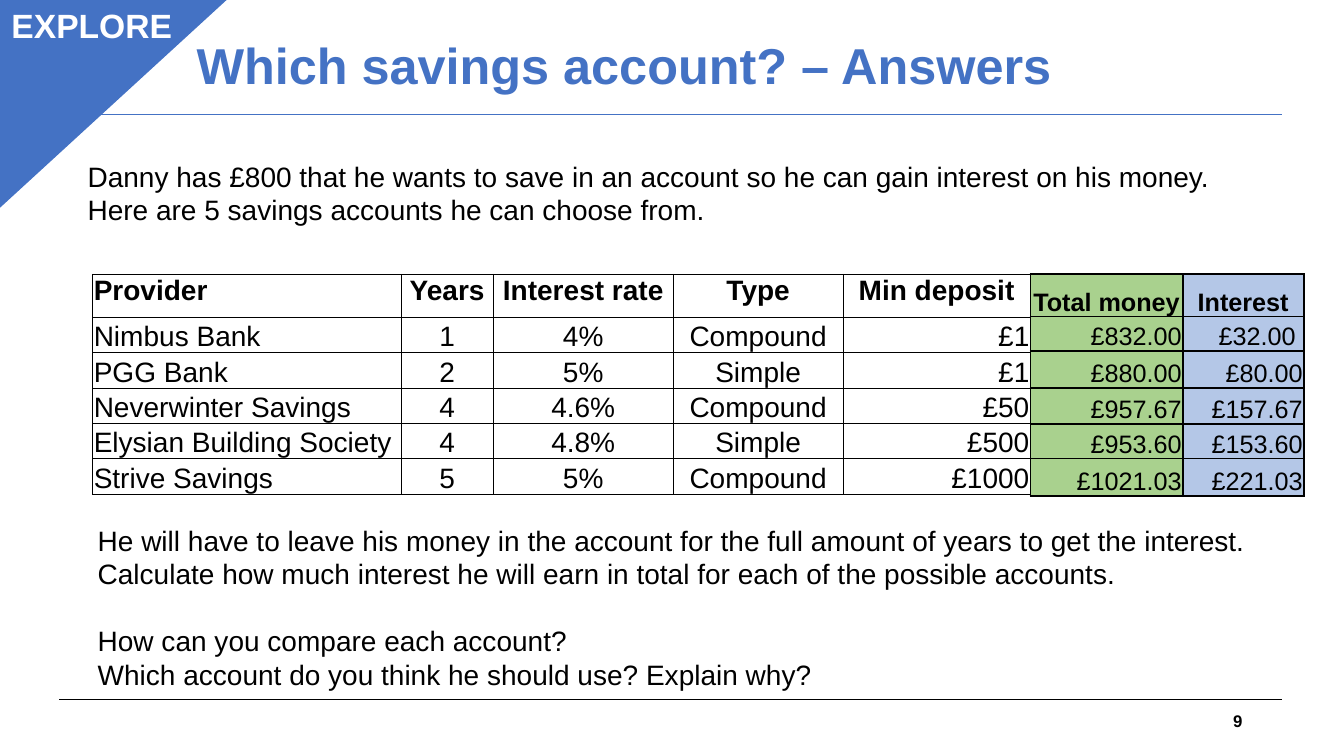
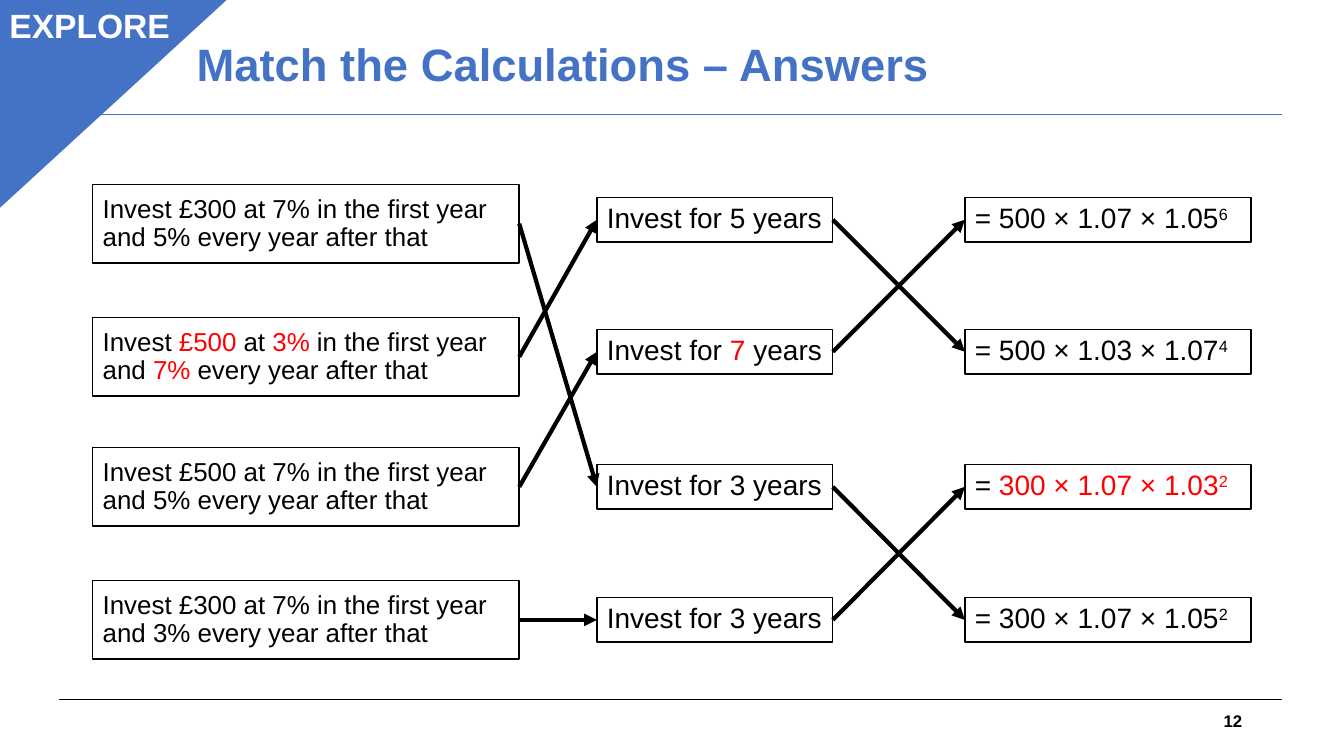
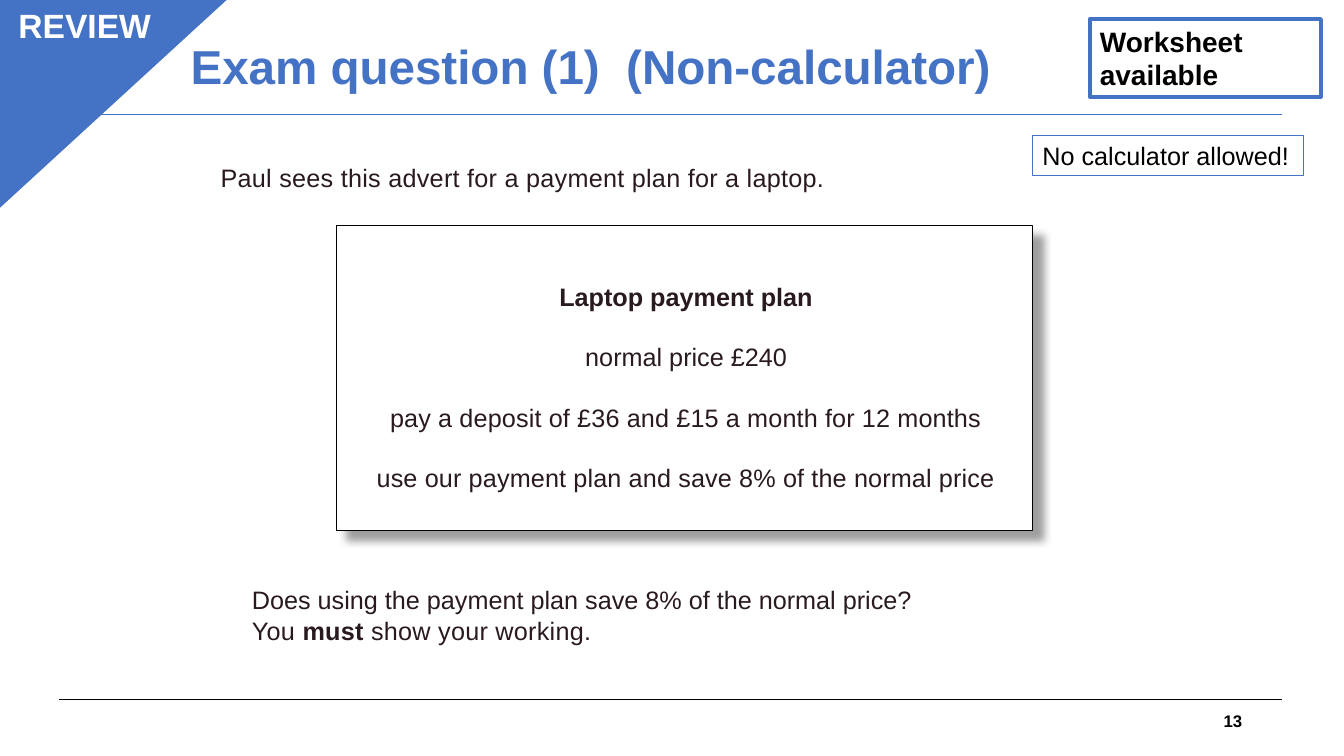
import dataclasses

import lxml.etree
import pptx
import pptx.dml.color
import pptx.enum.shapes
import pptx.enum.text
import pptx.oxml
import pptx.oxml.ns
import pptx.util

Inches = pptx.util.Inches
Pt = pptx.util.Pt
SHAPE = pptx.enum.shapes.MSO_SHAPE
ANCHOR = pptx.enum.text.MSO_ANCHOR
LEFT = pptx.enum.text.PP_ALIGN.LEFT
CENTER = pptx.enum.text.PP_ALIGN.CENTER
RIGHT = pptx.enum.text.PP_ALIGN.RIGHT
qn = pptx.oxml.ns.qn


@dataclasses.dataclass(frozen=True)
class Theme:
    """Colours, font and type sizes shared by the slides."""
    font: str = "Arial"
    blue: str = "4472C4"
    black: str = "000000"
    white: str = "FFFFFF"
    red: str = "FF0000"
    ink: str = "291A20"
    green_fill: str = "A9D18E"
    blue_fill: str = "B4C7E7"
    shadow: str = "0D0D0D"
    tag: float = 24
    body: float = 20
    match: float = 18.5
    small: float = 18
    number: float = 12


T = Theme()


def rgb(color):
    """Turn a hex string into a colour."""
    return pptx.dml.color.RGBColor.from_string(color)


def write(tf, paras, size, color=T.black, bold=False, align=LEFT, spacing=None,
          anchor=ANCHOR.TOP):
    """Fill a text frame; a run is a string or a (string, changes) pair."""
    tf.word_wrap = True
    tf.vertical_anchor = anchor
    for i, runs in enumerate(paras):
        p = tf.paragraphs[0] if i == 0 else tf.add_paragraph()
        p.alignment = align
        if spacing:
            p.line_spacing = spacing
        for run in [runs] if isinstance(runs, str) else runs:
            text, changes = (run, {}) if isinstance(run, str) else run
            r = p.add_run()
            r.text = text
            r.font.name = T.font
            r.font.size = Pt(size)
            r.font.bold = changes.get("bold", bold)
            r.font.color.rgb = rgb(changes.get("color", color))
            for name in ("spc", "baseline"):
                if name in changes:
                    r._r.get_or_add_rPr().set(name, str(changes[name]))


def add_text(s, box, paras, size, **style):
    """Add a text box in box (left, top, width, height)."""
    sp = s.shapes.add_textbox(*map(Inches, box))
    write(sp.text_frame, paras, size, **style)
    return sp


def add_box(s, box, line, weight, kind=SHAPE.RECTANGLE, fill=None):
    """Add an outlined preset shape without a shadow."""
    sp = s.shapes.add_shape(kind, *map(Inches, box))
    sp.shadow.inherit = False
    if fill:
        sp.fill.solid()
        sp.fill.fore_color.rgb = rgb(fill)
    else:
        sp.fill.background()
    sp.line.color.rgb = rgb(line)
    sp.line.width = Pt(weight)
    return sp


def add_line(s, start, end, color, weight):
    """Add a straight line between two points."""
    c = s.shapes.add_connector(pptx.enum.shapes.MSO_CONNECTOR.STRAIGHT,
                               *map(Inches, (*start, *end)))
    c.line.color.rgb = rgb(color)
    c.line.width = Pt(weight)
    lxml.etree.SubElement(c._element.spPr, qn("a:effectLst"))
    return c


def add_arrow(s, source, target):
    """Join the right side of source to the left side of target."""
    c = add_line(s, (0, 0), (1, 1), T.black, 3)
    c.begin_connect(source, 3)
    c.end_connect(target, 1)
    tail = lxml.etree.SubElement(c.line._get_or_add_ln(), qn("a:tailEnd"))
    tail.set("type", "triangle")


def add_shadow(sp):
    """Give a shape a soft shadow to the lower right."""
    effects = sp._element.spPr.find(qn("a:effectLst"))
    effects.append(pptx.oxml.parse_xml(
        f'<a:outerShdw {pptx.oxml.ns.nsdecls("a")} blurRad="{Pt(6)}" dist="{Pt(10)}" '
        f'dir="2700000" algn="tl" rotWithShape="0"><a:srgbClr val="{T.shadow}">'
        '<a:alpha val="40000"/></a:srgbClr></a:outerShdw>'))


def set_borders(cell, weight):
    """Draw the four borders of a cell in black."""
    tc_pr = cell._tc.get_or_add_tcPr()
    for i, side in enumerate("LRTB"):
        tc_pr.insert(i, pptx.oxml.parse_xml(
            f'<a:ln{side} {pptx.oxml.ns.nsdecls("a")} w="{Pt(weight)}"><a:solidFill>'
            f'<a:srgbClr val="{T.black}"/></a:solidFill></a:ln{side}>'))


def add_grid(s, left, top, widths, heights, rows, aligns, size, weight, fill=None):
    """Add a bordered table with a bold header row."""
    frame = s.shapes.add_table(len(rows), len(widths), *map(
        Inches, (left, top, sum(widths), sum(heights))))
    table = frame.table
    table.first_row = table.horz_banding = False
    for column, width in zip(table.columns, widths):
        column.width = Inches(width)
    for i, (row, height) in enumerate(zip(rows, heights)):
        table.rows[i].height = Inches(height)
        for j, text in enumerate(row):
            cell = table.cell(i, j)
            cell.margin_left = cell.margin_right = cell.margin_top = Inches(0.01)
            cell.margin_bottom = 0
            header = i == 0
            align = CENTER if header and j + fill_offset(fill) else aligns[j]
            write(cell.text_frame, [text], size, bold=header, align=align)
            cell.vertical_anchor = ANCHOR.BOTTOM if fill or not header else ANCHOR.TOP
            if fill:
                cell.fill.solid()
                cell.fill.fore_color.rgb = rgb(fill)
                if header:
                    cell.text_frame.paragraphs[0].space_after = Pt(6)
            else:
                cell.fill.background()
            set_borders(cell, weight)


def fill_offset(fill):
    """Count a filled answer column as never being the first column."""
    return 1 if fill else 0


def add_slide(prs, title, title_box, title_size, tag, tag_width, number):
    """Add a slide with its title, rules, corner tag and number."""
    s = prs.slides.add_slide(prs.slide_layouts[5])
    sp = s.shapes.title
    sp.left, sp.top, sp.width, sp.height = map(Inches, title_box)
    write(sp.text_frame, [title], title_size, color=T.blue, bold=True, spacing=0.9)
    sp.text_frame.auto_size = pptx.enum.text.MSO_AUTO_SIZE.NONE
    for y, color in ((6.94, T.black), (1.14, T.blue)):
        add_line(s, (0.59, y), (12.72, y), color, 0.75)
    corner = add_box(s, (0.07, -0.12, 2.1, 2.29), T.blue, 1, SHAPE.RIGHT_TRIANGLE, T.blue)
    corner.rotation = 90
    add_text(s, (-0.03, 0, tag_width, 0.5), [tag], T.tag, color=T.white, bold=True,
             align=CENTER)
    add_text(s, (9.42, 6.95, 3, 0.4), [number], T.number, bold=True, align=RIGHT,
             anchor=ANCHOR.MIDDLE)
    return s


def add_accounts(s, left, top):
    """Add the savings accounts table and its two answer columns."""
    rows = [
        ("Provider", "Years", "Interest rate", "Type", "Min deposit"),
        ("Nimbus Bank", "1", "4%", "Compound", "£1"),
        ("PGG Bank", "2", "5%", "Simple", "£1"),
        ("Neverwinter Savings", "4", "4.6%", "Compound", "£50"),
        ("Elysian Building Society", "4", "4.8%", "Simple", "£500"),
        ("Strive Savings", "5", "5%", "Compound", "£1000"),
    ]
    widths = (3.06, 0.91, 1.79, 1.68, 1.86)
    add_grid(s, left, top, widths, [0.43] + [0.35] * 5, rows,
             (LEFT, CENTER, CENTER, CENTER, RIGHT), T.body, 0.5)
    answers = [
        (1.51, T.green_fill, ("Total money", "£832.00", "£880.00", "£957.67",
                              "£953.60", "£1021.03")),
        (1.2, T.blue_fill, ("Interest", "£32.00 ", "£80.00", "£157.67",
                            "£153.60", "£221.03")),
    ]
    x = left + sum(widths)
    for width, fill, values in answers:
        add_grid(s, x, top, [width], (0.42, 0.34, 0.37, 0.36, 0.34, 0.37),
                 [[value] for value in values], [RIGHT], T.small, 1.5, fill)
        x += width


def savings_slide(prs):
    """Build the savings account answers."""
    s = add_slide(prs, "Which savings account? – Answers", (1.85, 0.36, 8.9, 0.89), 36,
                  "EXPLORE", 1.88, "9")
    add_accounts(s, 0.92, 2.72)
    add_text(s, (0.77, 1.53, 12.08, 1.08), [
        "Danny has £800 that he wants to save in an account so he can gain interest "
        "on his money.",
        "Here are 5 savings accounts he can choose from."], T.body)
    task = add_text(s, (0.87, 5.14, 11.61, 1.75), [
        "He will have to leave his money in the account for the full amount of years "
        "to get the interest.",
        "Calculate how much interest he will earn in total for each of the possible "
        "accounts.",
        "How can you compare each account?",
        "Which account do you think he should use? Explain why?"], T.body)
    task.text_frame.paragraphs[2].space_before = Pt(24)


def add_column(s, left, tops, width, height, texts, size):
    """Add one column of outlined boxes and return them."""
    boxes = []
    for top, runs in zip(tops, texts):
        sp = add_box(s, (left, top, width, height), T.black, 1)
        write(sp.text_frame, [runs], size, spacing=0.9, anchor=ANCHOR.MIDDLE)
        boxes.append(sp)
    return boxes


def matching_slide(prs):
    """Build the matching of investments, terms and calculations."""
    s = add_slide(prs, "Match the Calculations – Answers", (1.85, 0.37, 7.73, 0.99), 32.4,
                  "EXPLORE", 1.84, "12")
    red = {"color": T.red}
    plan = "Invest £{} at 7% in the first year and {}% every year after that"
    plans = [
        plan.format(300, 5),
        ["Invest ", ("£500 ", red), "at ", ("3%", red), " in the first year and ",
         ("7%", red), " every year after that"],
        plan.format(500, 5),
        plan.format(300, 3),
    ]
    terms = ["Invest for 5 years", ["Invest for ", ("7", red), " years"],
             "Invest for 3 years", "Invest for 3 years"]
    power = {"baseline": 30000}
    sums = [
        ["= 500 × 1.07 × 1.05", ("6", power)],
        ["= 500 × 1.03 × 1.07", ("4", power)],
        ["=", (" 300 × 1.07 × 1.03", red), ("2", {**red, **power})],
        ["= 300 × 1.07 × 1.05", ("2", power)],
    ]
    tops = (1.96, 3.27, 4.61, 5.93)
    plans = add_column(s, 0.92, (1.83, 3.15, 4.44, 5.76), 4.23, 0.78, plans, T.match)
    terms = add_column(s, 5.92, tops, 2.34, 0.44, terms, T.body)
    sums = add_column(s, 9.57, tops, 2.84, 0.44, sums, T.body)
    for sources, targets, order in ((plans, terms, (2, 0, 1, 3)),
                                    (terms, sums, (1, 0, 3, 2))):
        for source, i in zip(sources, order):
            add_arrow(s, source, targets[i])


def add_advert(s, left, top):
    """Add the shadowed laptop advert."""
    add_shadow(add_box(s, (left, top, 6.9, 3.02), T.black, 0.5, fill=T.white))
    tight = {"spc": 10}
    add_text(s, (left + 0.26, top + 0.2, 6.41, 2.52), [
        [("Laptop payment plan", {"bold": True})],
        "normal price £240",
        [("pay a deposit of £36 and £15 a month for 12 months", tight)],
        [("use our payment plan and save 8% of the normal price", tight)]],
        T.small, color=T.ink, align=CENTER, spacing=2.0)


def exam_slide(prs):
    """Build the exam question."""
    s = add_slide(prs, "Exam question (1)  (Non-calculator)", (1.79, 0.38, 9.02, 0.96), 34,
                  "REVIEW", 1.74, "13")
    loose = {"spc": 20}
    note = add_box(s, (10.81, 0.19, 2.29, 0.77), T.blue, 3)
    write(note.text_frame, ["Worksheet", "available"], T.body, bold=True)
    add_text(s, (2.09, 1.56, 6.5, 0.4), [
        [("Paul sees this advert for a payment plan for a laptop.", loose)]],
        T.small, color=T.ink)
    add_advert(s, 3.34, 2.24)
    add_text(s, (2.4, 5.75, 9.16, 0.71), [
        "Does using the payment plan save 8% of the normal price?",
        [("You ", loose), ("must", {"bold": True, **loose}),
         (" show your working.", loose)]], T.small, color=T.ink)
    rule = add_box(s, (10.24, 1.34, 2.69, 0.4), T.blue, 0.75)
    write(rule.text_frame, ["No calculator allowed!"], T.small)


def main():
    """Build and save the presentation."""
    prs = pptx.Presentation()
    prs.slide_width = Inches(13.33)
    prs.slide_height = Inches(7.5)
    for build in (savings_slide, matching_slide, exam_slide):
        build(prs)
    prs.save("out.pptx")


if __name__ == "__main__":
    main()
